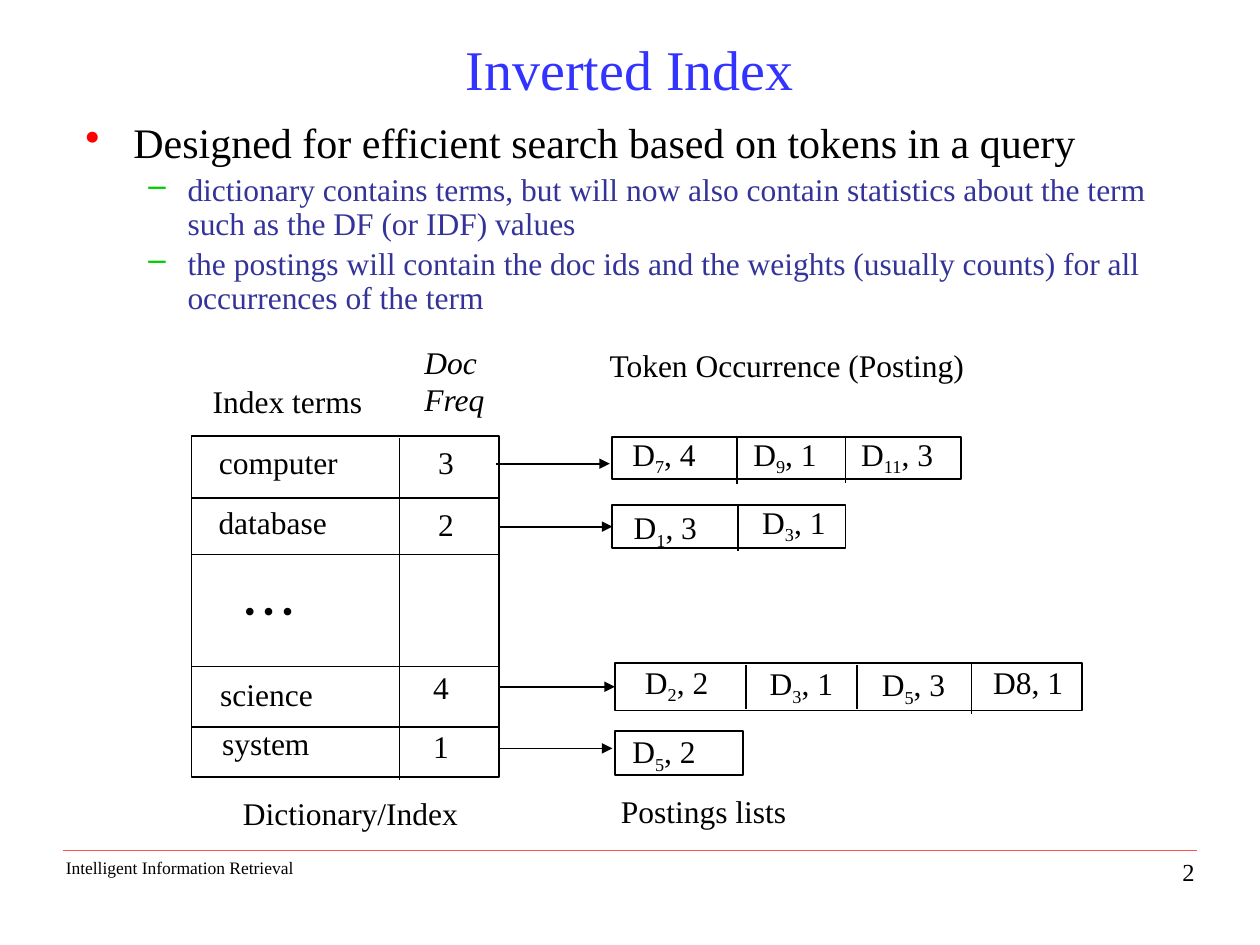
from lxml.etree import SubElement
from pptx import Presentation
from pptx.dml.color import RGBColor
from pptx.enum.shapes import MSO_CONNECTOR, MSO_SHAPE
from pptx.enum.text import MSO_ANCHOR, MSO_AUTO_SIZE, PP_ALIGN
from pptx.oxml.ns import qn
from pptx.util import Inches, Pt

COLORS = {
    "title": "3333FF", "text": "000000", "detail": "333399", "box": "FFFFFF",
    "bullet": "FF0000", "dash": "00CC00", "rule": "FF5050",
}
LEFT, CENTER, RIGHT = PP_ALIGN.LEFT, PP_ALIGN.CENTER, PP_ALIGN.RIGHT


def color(name):
    return RGBColor.from_string(COLORS[name])


def set_attributes(target, values):
    for name, value in values.items():
        setattr(target, name, value)


class SlideBuilder:
    font = "Times New Roman"
    line_width = 1

    def __init__(self, presentation):
        self.slide = presentation.slides.add_slide(presentation.slide_layouts[6])

    def add_runs(self, paragraph, text, size, color_name, italic=False):
        """Add runs; text between underscores is subscript, a newline is a break."""
        for row, line in enumerate(text.split("\n")):
            if row:
                paragraph.add_line_break()
            for index, part in enumerate(line.split("_")):
                run = paragraph.add_run()
                run.text = part
                set_attributes(run.font, {"name": self.font, "size": Pt(size), "italic": italic})
                run.font.color.rgb = color(color_name)
                if index % 2:
                    run._r.get_or_add_rPr().set("baseline", "-25000")

    def frame(self, left, top, width, height, **values):
        box = self.slide.shapes.add_textbox(*map(Inches, (left, top, width, height)))
        set_attributes(box.text_frame, {"word_wrap": True, **values})
        return box.text_frame

    def text(self, text, left, top, width, height=0.4, size=18, align=CENTER,
             color_name="text", italic=False, **values):
        frame = self.frame(left, top, width, height, **values)
        frame.paragraphs[0].alignment = align
        self.add_runs(frame.paragraphs[0], text, size, color_name, italic)

    def label(self, text, left, top, width, height=0.4, **style):
        self.text(text, left, top, width, height, word_wrap=False,
                  auto_size=MSO_AUTO_SIZE.SHAPE_TO_FIT_TEXT, **style)

    def bullet(self, paragraph, text, level, size, color_name, mark, mark_color, margin, hang):
        set_attributes(paragraph, {"level": level, "line_spacing": 0.9})
        self.add_runs(paragraph, text, size, color_name)
        properties = paragraph._p.get_or_add_pPr()
        properties.set("marL", str(Inches(margin)))
        properties.set("indent", str(-Inches(hang)))
        before = SubElement(properties, qn("a:spcBef"))
        SubElement(before, qn("a:spcPct")).set("val", "20000")
        bullet_color = SubElement(properties, qn("a:buClr"))
        SubElement(bullet_color, qn("a:srgbClr")).set("val", COLORS[mark_color])
        SubElement(properties, qn("a:buChar")).set("char", mark)

    def box(self, left, top, width, height):
        shape = self.slide.shapes.add_shape(
            MSO_SHAPE.RECTANGLE, *map(Inches, (left, top, width, height)))
        shape.shadow.inherit = False
        shape.fill.solid()
        shape.fill.fore_color.rgb = color("box")
        shape.line.color.rgb = color("text")
        shape.line.width = Pt(self.line_width)
        return shape

    def line(self, x1, y1, x2, y2, color_name="text", width=line_width, arrow=False):
        connector = self.slide.shapes.add_connector(
            MSO_CONNECTOR.STRAIGHT, *map(Inches, (x1, y1, x2, y2)))
        connector.line.color.rgb = color(color_name)
        connector.line.width = Pt(width)
        if arrow:
            SubElement(connector.line._get_or_add_ln(), qn("a:tailEnd")).set("type", "triangle")
        SubElement(connector._element.spPr, qn("a:effectLst"))
        return connector


def main():
    presentation = Presentation()
    set_attributes(presentation, {"slide_width": Inches(10), "slide_height": Inches(7.5)})
    builder = SlideBuilder(presentation)

    # Footer
    builder.line(0.5, 6.75, 9.5, 6.75, "rule", 0.5)
    builder.label("Intelligent Information Retrieval", 0.42, 6.75, 2.01, 0.27, size=10)
    builder.text("2", 7.5, 6.75, 2.08, 0.25, size=14, align=RIGHT)

    # Title and bullets
    builder.text("Inverted Index", 0.75, 0.25, 8.5, 0.58, size=32, color_name="title",
                 vertical_anchor=MSO_ANCHOR.MIDDLE)
    body = builder.frame(0.58, 0.92, 8.75, 2.15)
    builder.bullet(body.paragraphs[0], "Designed for efficient search based on tokens in a query",
                   0, 24, "text", "•", "bullet", 0.38, 0.38)
    for detail in (
        "dictionary contains terms, but will now also contain statistics about the term "
        "such as the DF (or IDF) values",
        "the postings will contain the doc ids and the weights (usually counts) for all "
        "occurrences of the term",
    ):
        builder.bullet(body.add_paragraph(), detail, 1, 18, "detail", "–", "dash", 0.81, 0.31)

    # Dictionary grid
    builder.box(1.52, 3.46, 2.44, 2.71)
    builder.line(3.17, 3.48, 3.17, 6.19)
    for y in (3.95, 4.4, 5.29, 5.77):
        builder.line(1.52, y, 3.96, y)

    # Terms: text, left, top, width; then frequency, left, top
    for term, left, top, width, frequency, frequency_left, frequency_top in (
        ("computer", 1.63, 3.47, 1.16, "3", 3.38, 3.47),
        ("database", 1.63, 3.94, 1.07, "2", 3.38, 3.96),
        ("science", 1.64, 5.31, 0.95, "4", 3.34, 5.25),
        ("system", 1.66, 5.7, 0.9, "1", 3.34, 5.72),
    ):
        builder.label(term, left, top, width)
        builder.label(frequency, frequency_left, frequency_top, 0.33, align=LEFT)
    builder.label("• • •", 1.84, 4.64, 0.68, align=LEFT)

    # Postings: box, arrow (start, end, y), joined to box, dividers (x, top, bottom),
    # entries (text, left, top, width)
    postings = (
        ((4.86, 3.47, 2.77, 0.33), (3.94, 4.84, 3.68), False,
         ((5.85, 3.48, 3.84), (6.71, 3.48, 3.83)),
         (("D_7_, 4", 4.91, 3.4, 0.72), ("D_9_, 1", 5.87, 3.4, 0.72),
          ("D_11_, 3", 6.72, 3.4, 0.8))),
        ((4.86, 4.01, 1.85, 0.34), (3.96, 4.86, 4.18), True,
         ((5.86, 4.02, 4.37),),
         (("D_1_, 3", 4.92, 3.98, 0.72), ("D_3_, 1", 5.94, 3.94, 0.72))),
        ((4.88, 5.26, 3.71, 0.38), (3.96, 4.88, 5.45), True,
         ((5.92, 5.28, 5.63), (6.8, 5.28, 5.63), (7.71, 5.26, 5.67)),
         (("D_2_, 2", 5.01, 5.21, 0.72), ("D_3_, 1", 6, 5.22, 0.72),
          ("D_5_, 3", 6.89, 5.23, 0.72), ("D8, 1", 7.78, 5.21, 0.76))),
        ((4.88, 5.8, 1.02, 0.35), (3.96, 4.86, 5.94), False, (),
         (("D_5_, 2", 4.91, 5.76, 0.72),)),
    )
    for bounds, (start, end, y), joined, dividers, entries in postings:
        posting_box = builder.box(*bounds)
        arrow = builder.line(start, y, end, y, arrow=True)
        if joined:
            arrow.end_connect(posting_box, 1)
        for x, top, bottom in dividers:
            builder.line(x, top, x, bottom)
        for entry in entries:
            builder.label(*entry)

    # Headings and captions
    builder.label("Index terms", 1.59, 2.98, 1.4, align=LEFT)
    builder.label("Doc\nFreq", 3.27, 2.67, 0.68, 0.71, align=LEFT, italic=True)
    builder.label("Token Occurrence (Posting)", 4.72, 2.7, 3.05)
    builder.label("Dictionary/Index", 1.83, 6.25, 1.93, align=LEFT)
    builder.label("Postings lists", 4.83, 6.24, 1.53, align=LEFT)

    presentation.save("out.pptx")


if __name__ == "__main__":
    main()
